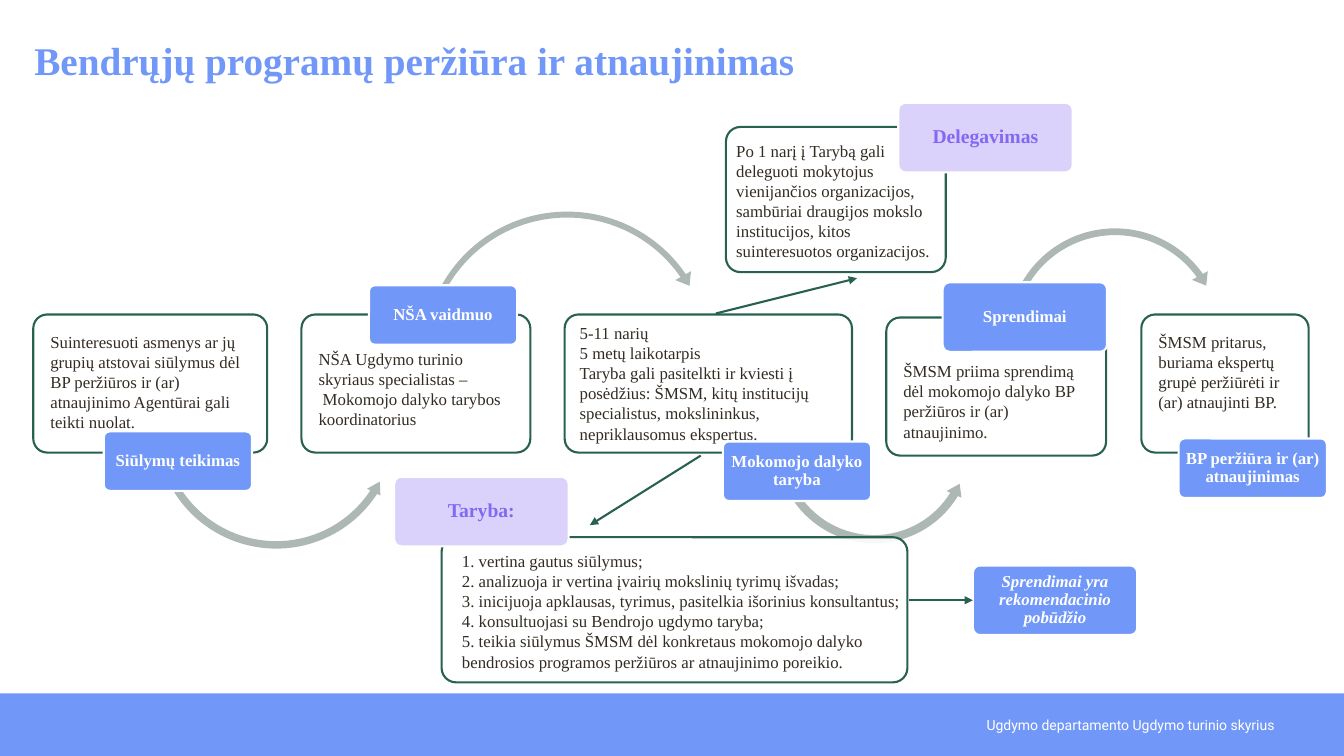
from lxml.etree import SubElement as Sub
from pptx import Presentation
from pptx.dml.color import RGBColor as RGB
from pptx.enum.shapes import MSO_CONNECTOR as LINK, MSO_SHAPE as SHAPE
from pptx.enum.text import MSO_ANCHOR as ANCHOR, MSO_AUTO_SIZE as FIT, PP_ALIGN as ALIGN
from pptx.oxml.ns import qn
from pptx.util import Inches, Pt

COLS, ROWS = 133.3, 75  # grid cells of a tenth of an inch
HUES = dict(blue="7198F8", green="286151", gray="ADB7B3", ink="322C23",
            lilac="DAD2FB", violet="8368F2", white="FFFFFF")
SERIF, SANS = "Times New Roman", "Roboto"


def hue(name):
    return RGB.from_string(HUES[name])


def cells(*counts):
    return [Inches(count / 10) for count in counts]


def write(frame, text, size=12, color="ink", font=SERIF, bold=False, italic=False,
          align=ALIGN.LEFT, anchor=ANCHOR.TOP, pad=(0, 0, 0, 0), lead=1, count=False):
    """Fill a text frame; a list gives paragraphs, pad is left, top, right, bottom."""
    frame.word_wrap, frame.auto_size = True, FIT.NONE
    frame.vertical_anchor = anchor
    (frame.margin_left, frame.margin_top,
     frame.margin_right, frame.margin_bottom) = cells(*pad)
    items = [text] if isinstance(text, str) else text
    for i, item in enumerate(items):
        par = frame.paragraphs[0] if i == 0 else frame.add_paragraph()
        par.text = item
        par.alignment, par.line_spacing = align, lead
        if count:
            props = par._p.get_or_add_pPr()
            props.set("marL", "0")
            props.set("indent", "0")
            Sub(props, qn("a:buAutoNum"), type="arabicPeriod")
        for run in par.runs:
            face = run.font
            face.name, face.size = font, Pt(size)
            face.bold, face.italic = bold, italic
            face.color.rgb = hue(color)


class Board:
    def __init__(self, deck):
        self.slide = deck.slides.add_slide(deck.slide_layouts[5])
        self.items = self.slide.shapes
        self.width = 1.5

    def shape(self, kind, at, fill, line=None):
        item = self.items.add_shape(kind, *cells(*at))
        item.shadow.inherit = False
        item.fill.solid()
        item.fill.fore_color.rgb = hue(fill)
        if line:
            item.line.color.rgb = hue(line)
            item.line.width = Pt(self.width)
        else:
            item.line.fill.background()
        return item

    def title(self, text, at):
        item = self.items.title
        item.left, item.top, item.width, item.height = cells(*at)
        write(item.text_frame, text, size=28, color="blue", bold=True,
              anchor=ANCHOR.MIDDLE, lead=0.9)

    def note(self, text, at, **style):
        write(self.items.add_textbox(*cells(*at)).text_frame, text, **style)

    def round(self, at, fill, line):
        item = self.shape(SHAPE.ROUNDED_RECTANGLE, at, fill, line)
        item.adjustments[0] = 0.1
        return item

    def box(self, at, text, pad, count=False):
        """Outlined card, slightly see-through."""
        item = self.round(at, "white", "green")
        color = item._element.spPr.find(qn("a:solidFill"))[0]
        Sub(color, qn("a:alpha"), val="90000")
        write(item.text_frame, text, pad=pad, count=count)

    def tag(self, at, text, fill="blue", color="white", size=12, italic=False):
        item = self.round(at, fill, "white")
        write(item.text_frame, text, size=size, color=color, bold=True, italic=italic,
              align=ALIGN.CENTER, anchor=ANCHOR.MIDDLE, pad=(0.3, 0.2, 0.3, 0.2), lead=0.9)
        return item

    def arc(self, kind, left, top, side, bends):
        item = self.shape(kind, (left, top, side, side), "gray")
        for i, bend in enumerate(bends):
            item.adjustments[i] = bend

    def arrow(self, start, end, goal=None):
        """Straight arrow; with a goal it ends at that shape's left side."""
        item = self.items.add_connector(LINK.STRAIGHT, *cells(*start, *end))
        if goal:
            item.end_connect(goal, 1)
        item.line.color.rgb = hue("green")
        item.line.width = Pt(self.width)
        props = item._element.spPr
        Sub(props.find(qn("a:ln")), qn("a:tailEnd"), type="triangle")
        Sub(props, qn("a:effectLst"))


DOWN, OVER = SHAPE.LEFT_CIRCULAR_ARROW, SHAPE.CIRCULAR_ARROW
# card place, card text, card padding, arc, tag place, tag text
STEPS = [
    ((3.3, 31.2, 23.2, 13.7),
     "Suinteresuoti asmenys ar jų grupių atstovai siūlymus dėl BP peržiūros ir (ar) "
     "atnaujinimo Agentūrai gali teikti nuolat.", (1.3, 1.3, 1.3, 0),
     (DOWN, 15.1, 30.2, 24.6, (0.03, 3.59, 19.91, 88.81, 0.03)),
     (10.3, 42.8, 14.7, 5.9), "Siūlymų teikimas"),
    ((29.9, 31.2, 22.7, 13.7),
     "NŠA Ugdymo turinio skyriaus specialistas –\n Mokomojo dalyko tarybos koordinatorius",
     (1.3, 3, 1.3, 0),
     (OVER, 41.4, 20.4, 29.7, (0.02, 2.93, 195.32, 125.76, 0.03)),
     (36.6, 28.3, 14.7, 5.9), "NŠA vaidmuo"),
    ((56, 31.2, 28.5, 13.7),
     "5-11 narių\n5 metų laikotarpis\nTaryba gali pasitelkti ir kviesti į posėdžius: ŠMSM, "
     "kitų institucijų specialistus, mokslininkus, nepriklausomus ekspertus.",
     (1.1, 0.4, 1.3, 0),
     (DOWN, 76.6, 34.1, 20.2, (0.04, 4.42, 18.88, 86.95, 0.04)),
     (71.7, 43.8, 14.7, 5.9), "Mokomojo dalyko taryba"),
    ((87.9, 31.5, 21.8, 13.7),
     "ŠMSM priima sprendimą dėl mokomojo dalyko BP peržiūros ir (ar) atnaujinimo.",
     (1.3, 3.9, 1.3, 0),
     (OVER, 99.4, 22.1, 22.4, (0.03, 3.96, 194.8, 126.27, 0.04)),
     (93.5, 28, 16.3, 6.9), "Sprendimai"),
    ((113.2, 31.2, 16.6, 13.7),
     "ŠMSM pritarus, buriama ekspertų grupė peržiūrėti ir (ar) atnaujinti BP.",
     (1.3, 1.3, 1.3, 0), None,
     (116.9, 43.5, 14.7, 5.9), "BP peržiūra ir (ar) atnaujinimas"),
]
DUTIES = [
    " vertina gautus siūlymus;",
    " analizuoja ir vertina įvairių mokslinių tyrimų išvadas;",
    " inicijuoja apklausas, tyrimus, pasitelkia išorinius konsultantus;",
    " konsultuojasi su Bendrojo ugdymo taryba;",
    " teikia siūlymus ŠMSM dėl konkretaus mokomojo dalyko bendrosios programos "
    "peržiūros ar atnaujinimo poreikio.",
]


def main():
    deck = Presentation()
    deck.slide_width, deck.slide_height = cells(COLS, ROWS)
    board = Board(deck)
    board.shape(SHAPE.RECTANGLE, (0, 68.8, COLS, 6.2), "blue")
    board.title("Bendrųjų programų peržiūra ir atnaujinimas", (3.4, 3.4, 77.2, 5.7))
    board.note("Ugdymo departamento Ugdymo turinio skyrius", (82.1, 70.2, 44.3, 3.5),
               size=10, color="white", font=SANS, align=ALIGN.RIGHT, anchor=ANCHOR.MIDDLE)

    for place, text, pad, arc, spot, name in STEPS:
        board.box(place, text, pad)
        if arc:
            board.arc(*arc)
        board.tag(spot, name)

    lilac = dict(fill="lilac", color="violet", size=14)
    board.box((72, 12.6, 21.8, 14.4),
              "Po 1 narį į Tarybą gali deleguoti mokytojus vienijančios organizacijos, "
              "sambūriai draugijos mokslo institucijos, kitos suinteresuotos organizacijos.",
              (0.6, 0.9, 0.5, 0))
    board.tag((89.1, 10.2, 17.3, 6.9), "Delegavimas", **lilac)
    board.box((43.8, 53.3, 46.2, 14.4), DUTIES, (1.6, 0.9, 0, 0), count=True)
    board.tag((39.1, 47.3, 17.3, 6.9), "Taryba:", **lilac)
    board.arrow((71, 31.1), (85, 27.6))
    board.arrow((69.5, 45.2), (58.5, 52.1))
    advice = board.tag((96.5, 56.1, 16.3, 6.9), "Sprendimai yra rekomendacinio pobūdžio",
                       italic=True)
    board.arrow((90.2, 59.55), (96.5, 59.55), goal=advice)
    deck.save("out.pptx")


if __name__ == "__main__":
    main()
